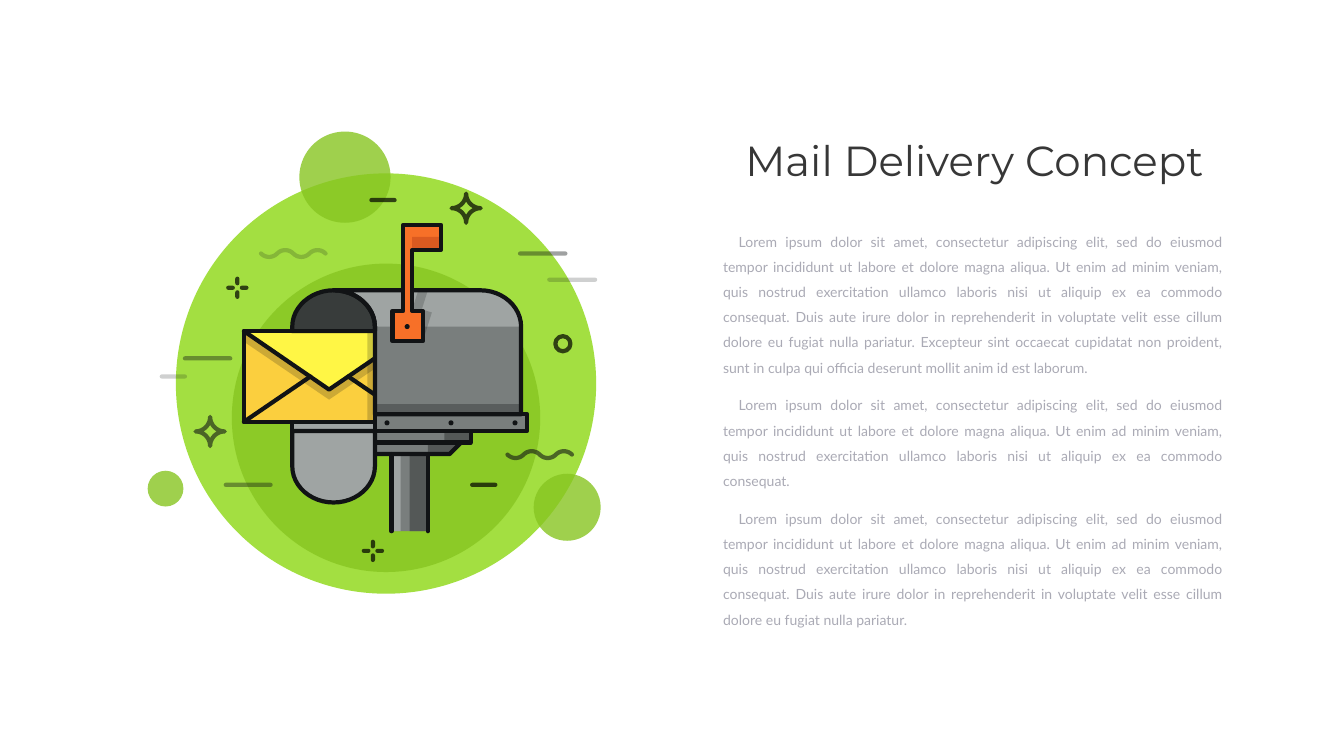
"""Builds the mail delivery slide: an illustrated mailbox beside a title and three paragraphs."""
from pptx import Presentation
from pptx import util as u
from pptx.dml import color
from pptx.enum import shapes, text
from pptx.oxml import ns, xmlchemy

PX = 9144
SLIDE = (2667, 1500)

TITLE = "Mail Delivery Concept"
OPENING = ("Lorem ipsum dolor sit amet, consectetur adipiscing elit, sed do eiusmod tempor incididunt "
           "ut labore et dolore magna aliqua. Ut enim ad minim veniam, quis nostrud exercitation "
           "ullamco laboris nisi ut aliquip ex ea commodo consequat.")
MIDDLE = (" Duis aute irure dolor in reprehenderit in voluptate velit esse cillum dolore eu fugiat "
          "nulla pariatur.")
ENDING = (" Excepteur sint occaecat cupidatat non proident, sunt in culpa qui officia deserunt "
          "mollit anim id est laborum.")
BODY = [OPENING + MIDDLE + ENDING, OPENING, OPENING + MIDDLE]


def fill(hex_code, alpha=100):
    """Describe a filled area without an outline."""
    return ("fill", hex_code, alpha)


def stroke(hex_code, alpha=100):
    """Describe an outline without a fill."""
    return ("stroke", hex_code, alpha)


LIME, GREEN = fill("A3DF41"), fill("87C521", 80)
STEEL, DARK, PALE, INTERIOR = fill("797E7D"), fill("545857"), fill("9FA4A3"), fill("383C3B")
YELLOW, AMBER, ORANGE, RUST = fill("FFF645"), fill("FBCF3E"), fill("F77028"), fill("DB5A20")
SHADE, DEEP_SHADE, RIVET = fill("111415", 20), fill("111415", 30), fill("111315")
INK, BLACK = stroke("111315"), stroke("000000", 70)
FAINT, SOFT, STRONG = (stroke("111415", alpha) for alpha in (20, 40, 60))

# Path points: (x, y) is a straight step, six numbers are a cubic curve.
ENVELOPE = (484, 657, 339, 180)
FLAP = [(484, 657), (653, 773), (823, 657)]
OPENING_ARCH = [(580, 657), (580, 648), (580, 609, 617, 576, 662, 576),
                (707, 576, 744, 609, 744, 648), (744, 657)]
SHELL_LEFT = [(953, 576), (662, 576), (707, 576, 744, 609, 744, 648)]
SHELL_RIGHT = [(1034, 648), (1034, 609, 998, 576, 953, 576)]
SHELL = SHELL_LEFT + [(744, 822), (1034, 822)] + SHELL_RIGHT
DOOR = [(662, 997), (707, 997, 744, 965, 744, 925), (744, 855), (580, 855), (580, 925),
        (580, 965, 617, 997, 662, 997)]
BRACKET = [(711, 878), (915, 878), (892, 901), (734, 901)]
SHELF, HINGE, PLATE = (744, 822, 302, 33), (580, 837, 164, 19), (692, 855, 242, 23)
FLAG = [(875, 496), (875, 446), (800, 446), (800, 617), (779, 617), (779, 677), (839, 677),
        (839, 617), (818, 617), (818, 496)]


def wave(x, y):
    """Return a path of four alternating arcs."""
    steps = [(x + 32 * i, y + (9, -9)[i % 2]) for i in range(4)]
    return [(x, y)] + [(a + 9, b, a + 23, b, a + 32, y) for a, b in steps]


def sparkle(x, y):
    """Return a four-pointed star with hollow sides."""
    tips = [(x, y + 29), (x - 29, y), (x, y - 29), (x + 29, y)]
    inner = [(x + (a - x) * 0.45, y + (b - y) * 0.45) for a, b in tips]
    return tips[:1] + [inner[i] + inner[(i + 1) % 4] + tips[(i + 1) % 4] for i in range(4)]


def twinkle(x, y):
    """Return four short ticks around a centre."""
    return [("line", (x + 9 * a, y + 9 * b, x + 18 * a, y + 18 * b), BLACK)
            for a, b in ((0, -1), (-1, 0), (0, 1), (1, 0))]


BACKDROP = [("oval", (349, 344, 834, 834), LIME)] + [
    ("oval", (x, y, size, size), GREEN)
    for x, y, size in ((460, 523, 612), (594, 261, 181), (1059, 940, 133), (293, 934, 71))]
LETTER = [
    ("rect", ENVELOPE, YELLOW),
    ("closed", FLAP + [(823, 837), (484, 837)], AMBER),
    ("closed", [(653, 773), (484, 657), (484, 678), (653, 793), (823, 678), (823, 657)], SHADE),
    ("rect", ENVELOPE, INK),
    ("open", FLAP, INK),
    ("line", (691, 747, 823, 837), INK),
    ("line", (484, 837, 616, 747), INK)]
LETTER_SHADE = [("rect", (729, 657, 13, 178), SHADE)]
MAILBOX = [
    ("rect", PLATE, STEEL),
    ("rect", (882, 855, 52, 23), DARK),
    ("closed", BRACKET, STEEL),
    ("closed", [(849, 878), (849, 901), (892, 901), (915, 878)], DARK),
    ("rect", (777, 901, 72, 153), STEEL),
    ("rect", (813, 901, 36, 153), DARK),
    ("rect", (777, 901, 18, 153), PALE),
    ("rect", SHELF, STEEL),
    ("rect", HINGE, PALE),
    ("closed", OPENING_ARCH, INTERIOR),
    ("closed", SHELL, STEEL),
    ("rect", (748, 802, 286, 17), DEEP_SHADE),
    ("closed", SHELL_LEFT + SHELL_RIGHT, PALE),
    *[("oval", (x, 834, 10, 10), RIVET) for x in (890, 1017, 763)],
    ("rect", SHELF, INK),
    ("closed", OPENING_ARCH, INK),
    ("closed", SHELL, INK),
    ("rect", HINGE, INK),
    ("rect", PLATE, INK),
    ("closed", BRACKET, INK),
    *[("line", (x, 901, x, 1054), INK) for x in (777, 849)],
    ("closed", DOOR, PALE),
    ("closed", DOOR, INK)]
FLAG_SHADE = [("closed", [(830, 576), (820, 608), (800, 602), (782, 659), (839, 677), (857, 620),
                          (837, 614), (849, 576)], SHADE)]
SIGNAL = [
    ("closed", FLAG, ORANGE),
    ("rect", (818, 470, 57, 25), RUST),
    ("oval", (803, 643, 10, 10), RIVET),
    ("closed", FLAG, INK)]
DASHES = [(367, 711, 457, SOFT), (1032, 503, 1122, SOFT), (448, 962, 537, SOFT),
          (321, 747, 367, FAINT), (937, 962, 983, BLACK), (737, 397, 783, BLACK),
          (1090, 555, 1181, FAINT)]
ACCENTS = [
    ("open", wave(1007, 902), STRONG),
    ("open", wave(518, 503), FAINT),
    *[("line", (x, y, end, y), style) for x, y, end, style in DASHES],
    ("closed", sparkle(417, 856), STRONG),
    ("closed", sparkle(925, 413), BLACK)]
RING = [("oval", (1102, 667, 30, 30), BLACK)]

# Layers from back to front: (items, grouped).
BACK = [(BACKDROP, False)]
FRONT = [(LETTER, True), (LETTER_SHADE, False), (MAILBOX, True), (FLAG_SHADE, False),
         (SIGNAL, True), (ACCENTS, False), (twinkle(471, 571), True), (twinkle(740, 1093), True),
         (RING, False)]


def rgb(hex_code):
    """Turn a hex string into a colour."""
    return color.RGBColor.from_string(hex_code)


def emu(values):
    """Scale px lengths to EMU."""
    return [round(value * PX) for value in values]


def flatten(outline, steps=12):
    """Replace each cubic curve of a path by short straight steps."""
    points = [outline[0]]
    for step in outline[1:]:
        if len(step) == 2:
            points.append(step)
            continue
        corners = (points[-1], step[:2], step[2:4], step[4:])
        for i in range(1, steps + 1):
            t = i / steps
            weights = ((1 - t) ** 3, 3 * t * (1 - t) ** 2, 3 * t * t * (1 - t), t ** 3)
            points.append(tuple(sum(w * c[axis] for w, c in zip(weights, corners))
                                for axis in (0, 1)))
    return points


def paint(shape, style, is_line):
    """Apply a fill or stroke, with its opacity and without a shadow."""
    kind, hex_code, alpha = style
    properties = shape.element.spPr
    if kind == "fill":
        shape.line.fill.background()
        target = shape.fill
    else:
        if not is_line:
            shape.fill.background()
        shape.line.width = u.Pt(6)
        target = shape.line.fill
    target.solid()
    target.fore_color.rgb = rgb(hex_code)
    if kind == "stroke":
        outline = properties.find(ns.qn("a:ln"))
        outline.set("cap", "rnd")
        outline.append(xmlchemy.OxmlElement("a:round"))
    if alpha < 100:
        opacity = xmlchemy.OxmlElement("a:alpha")
        opacity.set("val", str(alpha * 1000))
        next(properties.iter(ns.qn("a:srgbClr"))).append(opacity)
    properties.append(xmlchemy.OxmlElement("a:effectLst"))


def draw(canvas, items):
    """Draw a list of items onto a page or group."""
    presets = {"rect": shapes.MSO_SHAPE.RECTANGLE, "oval": shapes.MSO_SHAPE.OVAL}
    for kind, place, style in items:
        if kind in presets:
            shape = canvas.add_shape(presets[kind], *emu(place))
        elif kind == "line":
            shape = canvas.add_connector(shapes.MSO_CONNECTOR.STRAIGHT, *emu(place))
        else:
            start, *rest = [emu(point) for point in flatten(place)]
            builder = canvas.build_freeform(*start)
            builder.add_line_segments(rest, close=kind == "closed")
            shape = builder.convert_to_shape()
        paint(shape, style, kind == "line")


def draw_layers(page, layers):
    """Draw layers in order, each in a group where asked."""
    for items, grouped in layers:
        draw(page.shapes.add_group_shape().shapes if grouped else page.shapes, items)


def write(page, place, lines, font, size, hex_code, align):
    """Add a text box with one paragraph per line and return its paragraphs."""
    frame = page.shapes.add_textbox(*emu(place)).text_frame
    frame.word_wrap = True
    frame.auto_size = text.MSO_AUTO_SIZE.SHAPE_TO_FIT_TEXT
    frame.text = "\n".join(lines)
    for para in frame.paragraphs:
        para.alignment = align
        para.font.name, para.font.size = font, u.Pt(size)
        para.font.color.rgb = rgb(hex_code)
    return frame.paragraphs


def main():
    """Build and save the deck."""
    deck = Presentation()
    deck.slide_width, deck.slide_height = emu(SLIDE)
    page = deck.slides.add_slide(deck.slide_layouts[6])
    draw_layers(page, BACK)
    write(page, (1420, 262, 1027, 111), [TITLE], "Montserrat", 60, "373737", text.PP_ALIGN.CENTER)
    for para in write(page, (1425, 441, 1011, 767), BODY, "Lato", 20, "AAAAB5",
                      text.PP_ALIGN.JUSTIFY):
        para.line_spacing, para.space_before = 1.5, u.Pt(18)
        para._p.get_or_add_pPr().set("indent", str(31 * PX))
    draw_layers(page, FRONT)
    deck.save("out.pptx")


if __name__ == "__main__":
    main()
